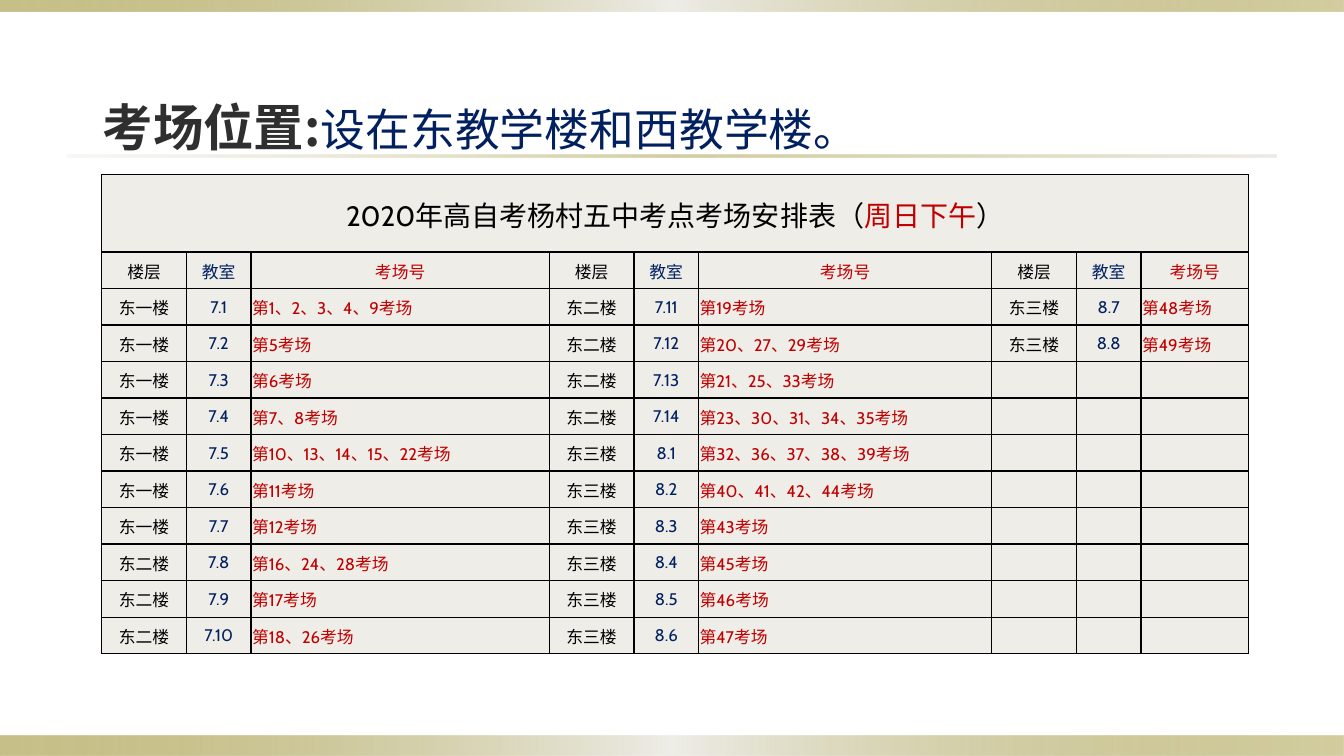
"""Build the exam room location slide with its seating schedule table."""
from dataclasses import dataclass

from lxml.etree import SubElement
from pptx import Presentation
from pptx.dml.color import RGBColor
from pptx.enum.shapes import MSO_SHAPE as Shape
from pptx.enum.text import MSO_ANCHOR as Anchor, MSO_AUTO_SIZE as AutoSize, PP_ALIGN as Align
from pptx.oxml.ns import qn
from pptx.slide import Slide
from pptx.table import _Cell as Cell
from pptx.text.text import _Paragraph as Paragraph
from pptx.util import Pt

COLORS = {
    "olive": "918415", "sand": "EEEDE8", "stone": "DCD9CC", "heading": "2F2F2F",
    "navy": "002060", "red": "C00000", "black": "000000",
}
CJK_FONT = "Noto Sans CJK SC"
BLOCK_HEADERS = ("楼层", "教室", "考场号")
BLOCK_COLORS = ("black", "navy", "red")
BLOCK_ROOMS = 10
COLUMN_WIDTHS = (60.5, 46.1, 213.1, 60.5, 46.1, 209.5, 60.5, 46.1, 77)
CAPTION_HEIGHT, ROW_HEIGHT = 55.4, 26.1


@dataclass(frozen=True)
class Stop:
    position: int
    color: str
    opacity: int = 100


@dataclass(frozen=True)
class Band:
    left: float
    top: float
    width: float
    height: float
    stops: tuple[Stop, ...]


@dataclass(frozen=True)
class Phrase:
    text: str
    color: str
    size: float
    font: str = "Cabin"
    bold: bool = False


@dataclass(frozen=True)
class Room:
    floor: str
    number: str
    exams: str


EDGE_STOPS = (Stop(0, "olive", 50), Stop(50, "sand"), Stop(100, "olive", 40))
RULE_STOPS = (Stop(0, "stone", 20), Stop(50, "olive", 40), Stop(100, "stone", 50))
BANDS = (
    Band(0, 525.6, 960, 14.4, EDGE_STOPS),
    Band(0, 0, 960, 8.6, EDGE_STOPS),
    Band(48, 110.7, 864, 1.8, RULE_STOPS),
)
HEADING = (
    Phrase("考场位置:", "heading", 36, CJK_FONT, True),
    Phrase("设在东教学楼和西教学楼。", "navy", 32, "Arial"),
)
CAPTION = (
    Phrase("2020年高自考杨村五中考点考场安排表（", "black", 20),
    Phrase("周日下午", "red", 20),
    Phrase("）", "black", 20),
)
ROOMS = (
    Room("东一楼", "7.1", "第1、2、3、4、9考场"),
    Room("东一楼", "7.2", "第5考场"),
    Room("东一楼", "7.3", "第6考场"),
    Room("东一楼", "7.4", "第7、8考场"),
    Room("东一楼", "7.5", "第10、13、14、15、22考场"),
    Room("东一楼", "7.6", "第11考场"),
    Room("东一楼", "7.7", "第12考场"),
    Room("东二楼", "7.8", "第16、24、28考场"),
    Room("东二楼", "7.9", "第17考场"),
    Room("东二楼", "7.10", "第18、26考场"),
    Room("东二楼", "7.11", "第19考场"),
    Room("东二楼", "7.12", "第20、27、29考场"),
    Room("东二楼", "7.13", "第21、25、33考场"),
    Room("东二楼", "7.14", "第23、30、31、34、35考场"),
    Room("东三楼", "8.1", "第32、36、37、38、39考场"),
    Room("东三楼", "8.2", "第40、41、42、44考场"),
    Room("东三楼", "8.3", "第43考场"),
    Room("东三楼", "8.4", "第45考场"),
    Room("东三楼", "8.5", "第46考场"),
    Room("东三楼", "8.6", "第47考场"),
    Room("东三楼", "8.7", "第48考场"),
    Room("东三楼", "8.8", "第49考场"),
)


def rgb(color: str) -> RGBColor:
    """Look up a named colour."""
    return RGBColor.from_string(COLORS[color])


def draw_band(slide: Slide, band: Band) -> None:
    """Draw a borderless rectangle with a horizontal translucent gradient."""
    strip = slide.shapes.add_shape(
        Shape.RECTANGLE, Pt(band.left), Pt(band.top), Pt(band.width), Pt(band.height))
    strip.shadow.inherit = False
    strip.line.fill.background()
    strip.fill.gradient()
    strip.fill.gradient_angle = 0
    stop_list = strip.fill._fill._gradFill.find(qn("a:gsLst"))
    for preset in list(stop_list):
        stop_list.remove(preset)
    for stop in band.stops:
        mark = SubElement(stop_list, qn("a:gs"), pos=str(stop.position * 1000))
        tint = SubElement(mark, qn("a:srgbClr"), val=COLORS[stop.color])
        SubElement(tint, qn("a:alpha"), val=str(stop.opacity * 1000))


def write_phrases(paragraph: Paragraph, phrases: tuple[Phrase, ...], align: Align) -> None:
    """Write each phrase as a formatted run."""
    paragraph.alignment = align
    for phrase in phrases:
        run = paragraph.add_run()
        run.text = phrase.text
        run.font.size = Pt(phrase.size)
        run.font.bold = phrase.bold
        run.font.name = phrase.font
        run.font.color.rgb = rgb(phrase.color)
        SubElement(run.font._element, qn("a:ea"), typeface=CJK_FONT)


def style_cell(cell: Cell) -> None:
    """Give a cell thin black borders, tight margins and a sand fill."""
    cell.margin_left = cell.margin_top = cell.margin_right = Pt(0.75)
    cell.margin_bottom = Pt(0)
    cell.vertical_anchor = Anchor.MIDDLE
    properties = cell._tc.get_or_add_tcPr()
    for side in ("a:lnL", "a:lnR", "a:lnT", "a:lnB"):
        border = SubElement(properties, qn(side), w=str(Pt(1)))
        solid = SubElement(border, qn("a:solidFill"))
        SubElement(solid, qn("a:srgbClr"), val=COLORS["black"])
    cell.fill.solid()
    cell.fill.fore_color.rgb = rgb("sand")


def draw_schedule(slide: Slide) -> None:
    """Draw the table of rooms, three blocks side by side."""
    row_count = BLOCK_ROOMS + 2
    schedule = slide.shapes.add_table(
        row_count, len(COLUMN_WIDTHS), Pt(72.7), Pt(124.6), Pt(sum(COLUMN_WIDTHS)),
        Pt(CAPTION_HEIGHT + ROW_HEIGHT * (row_count - 1))).table
    schedule.first_row = schedule.horz_banding = False
    for column, width in zip(schedule.columns, COLUMN_WIDTHS):
        column.width = Pt(width)
    for index, row in enumerate(schedule.rows):
        row.height = Pt(ROW_HEIGHT if index else CAPTION_HEIGHT)
    for cell in schedule.iter_cells():
        style_cell(cell)

    caption = schedule.cell(0, 0)
    caption.merge(schedule.cell(0, len(COLUMN_WIDTHS) - 1))
    write_phrases(caption.text_frame.paragraphs[0], CAPTION, Align.CENTER)

    block_width = len(BLOCK_HEADERS)
    for column in range(len(COLUMN_WIDTHS)):
        block, field = divmod(column, block_width)
        rooms = ROOMS[block * BLOCK_ROOMS:(block + 1) * BLOCK_ROOMS]
        entries = [(room.floor, room.number, room.exams)[field] for room in rooms]
        for row, entry in enumerate([BLOCK_HEADERS[field], *entries], start=1):
            is_exam_list = row > 1 and field == block_width - 1
            write_phrases(
                schedule.cell(row, column).text_frame.paragraphs[0],
                (Phrase(entry, BLOCK_COLORS[field], 12),),
                Align.LEFT if is_exam_list else Align.CENTER)


def main() -> None:
    """Assemble and save the slide."""
    deck = Presentation()
    deck.slide_width, deck.slide_height = Pt(960), Pt(540)
    slide = deck.slides.add_slide(deck.slide_layouts[5])
    for band in BANDS:
        draw_band(slide, band)
    heading = slide.shapes.title
    heading.left, heading.top, heading.width, heading.height = Pt(66.2), Pt(64.8), Pt(806.4), Pt(51.1)
    heading.text_frame.auto_size = AutoSize.NONE
    heading.text_frame.vertical_anchor = Anchor.MIDDLE
    write_phrases(heading.text_frame.paragraphs[0], HEADING, Align.LEFT)
    draw_schedule(slide)
    deck.save("out.pptx")


if __name__ == "__main__":
    main()
